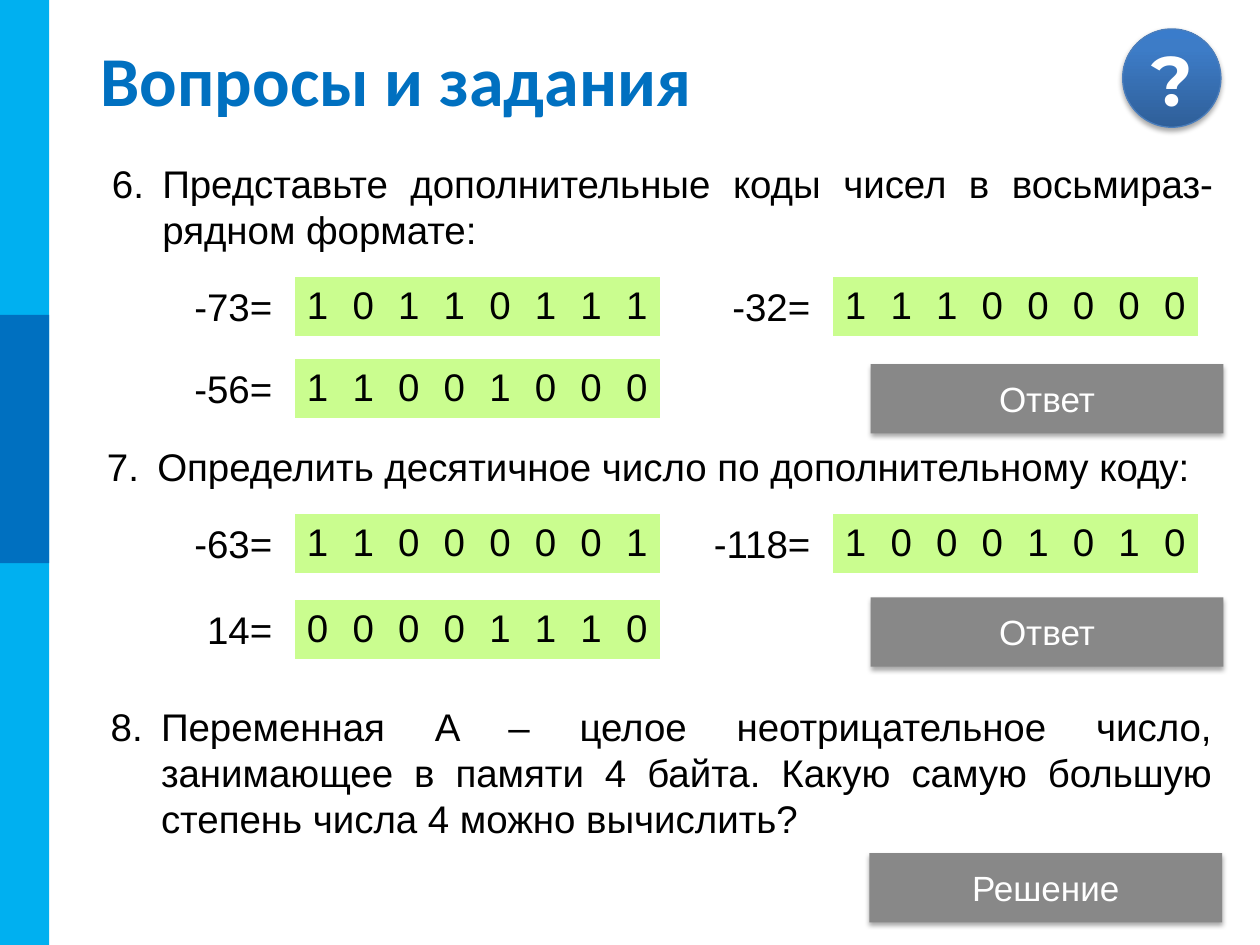
from copy import deepcopy
from dataclasses import dataclass

from pptx import Presentation
from pptx.dml.color import RGBColor
from pptx.enum.shapes import MSO_SHAPE as Preset
from pptx.enum.text import MSO_ANCHOR as Anchor, PP_ALIGN as Align
from pptx.oxml import parse_xml
from pptx.oxml.ns import nsdecls, qn
from pptx.util import Inches, Pt

WIDTH, HEIGHT = Inches(10), Inches(7.5)
COLUMNS, ROWS = 100, 75
BIT_COLUMNS, CODE_ROWS = 3.62, 4.6
NO_TABLE_STYLE = "{2D5ABB26-0587-4C30-8999-92F81FD0307C}"

TITLE_FONT = {"name": "Calibri", "size": Pt(40), "bold": True}
MARK_FONT = {"name": "Montserrat", "size": Pt(40), "bold": True}
BODY_FONT = {"name": "Arial", "size": Pt(22)}
BUTTON_FONT = {"name": "Arial", "size": Pt(20)}
NO_MARGINS = {"margin_left": 0, "margin_right": 0}
PLAIN_TABLE = {"first_row": False, "horz_banding": False}


@dataclass(frozen=True)
class Area:
    """A rectangle counted in grid columns and rows."""

    column: float
    row: float
    columns: float
    rows: float

    def box(self) -> tuple[int, int, int, int]:
        """Return left, top, width and height as slide lengths."""
        return (
            int(WIDTH * self.column / COLUMNS),
            int(HEIGHT * self.row / ROWS),
            int(WIDTH * self.columns / COLUMNS),
            int(HEIGHT * self.rows / ROWS),
        )


@dataclass(frozen=True)
class Question:
    """A numbered task."""

    number: int
    wording: str
    area: Area
    align: Align


@dataclass(frozen=True)
class Code:
    """A decimal number beside its eight-bit code."""

    decimal: str
    bits: str
    column: float
    row: float


@dataclass(frozen=True)
class Button:
    """A grey button that stands for a hidden answer."""

    caption: str
    column: float
    row: float


BANDS = [
    (Area(0, 0, 3.9, 75), "00B0F0"),
    (Area(0, 25, 3.9, 19.7), "0070C0"),
]
QUESTIONS = [
    Question(6, "Представьте дополнительные коды чисел в восьмираз-рядном формате:",
             Area(7.9, 12.2, 89.4, 8.4), Align.JUSTIFY),
    Question(7, "Определить десятичное число по дополнительному коду:",
             Area(7.5, 34.7, 92.5, 4.7), Align.LEFT),
    Question(8, "Переменная A – целое неотрицательное число, занимающее в памяти "
                "4 байта. Какую самую большую степень числа 4 можно вычислить?",
             Area(7.8, 55.3, 89.4, 12.1), Align.JUSTIFY),
]
LEFT_CODES, RIGHT_CODES = 23.4, 66.1
CODES = [
    Code("-73=", "10110111", LEFT_CODES, 22),
    Code("-32=", "11100000", RIGHT_CODES, 22),
    Code("-56=", "11001000", LEFT_CODES, 28.5),
    Code("-63=", "11000001", LEFT_CODES, 40.8),
    Code("-118=", "10001010", RIGHT_CODES, 40.8),
    Code("14=", "00001110", LEFT_CODES, 47.6),
]
BUTTONS = [
    Button("Ответ", 69.1, 28.9),
    Button("Ответ", 69.1, 47.4),
    Button("Решение", 69, 67.7),
]


def colour(code: str) -> RGBColor:
    """Turn a hex string into a colour."""
    return RGBColor.from_string(code)


def apply(target, values: dict) -> None:
    """Set every attribute named in the format values."""
    for name, value in values.items():
        setattr(target, name, value)


def write(frame, wording: str, font: dict, ink: str, align: Align):
    """Fill a text frame with one formatted paragraph."""
    paragraph = frame.paragraphs[0]
    paragraph.alignment = align
    run = paragraph.add_run()
    run.text = wording
    apply(run.font, font)
    run.font.color.rgb = colour(ink)
    return paragraph


def add_block(slide, preset: Preset, area: Area, fill: str):
    """Draw a flat shape without outline or shadow."""
    block = slide.shapes.add_shape(preset, *area.box())
    block.shadow.inherit = False
    block.fill.solid()
    block.fill.fore_color.rgb = colour(fill)
    block.line.fill.background()
    return block


def cast_shadow(block) -> None:
    """Give a shape a soft shadow below it."""
    effects = block.element.spPr.find(qn("a:effectLst"))
    effects.append(parse_xml(
        f'<a:outerShdw {nsdecls("a")} blurRad="{Pt(3.1)}" dist="{Pt(1.8)}" '
        'dir="5400000" rotWithShape="0"><a:srgbClr val="000000">'
        '<a:alpha val="35000"/></a:srgbClr></a:outerShdw>'))


def add_question_mark(slide) -> None:
    """Draw the round question badge."""
    badge = add_block(slide, Preset.OVAL, Area(89.1, 2.3, 7.8, 7.8), "3A7CCB")
    badge.fill.gradient()
    badge.fill.gradient_angle = 90
    gradient = badge.element.spPr.find(qn("a:gradFill")).find(qn("a:gsLst"))
    gradient.insert(1, deepcopy(gradient[0]))
    shades = [(0, "2F5F99"), (0.8, "3D7CC7"), (1, "3A7CCB")]
    for stop, (position, shade) in zip(badge.fill.gradient_stops, shades):
        stop.position = position
        stop.color.rgb = colour(shade)
    badge.line.color.rgb = colour("4B7EBC")
    badge.line.width = Pt(0.75)
    cast_shadow(badge)
    apply(badge.text_frame, {**NO_MARGINS, "vertical_anchor": Anchor.MIDDLE})
    write(badge.text_frame, "?", MARK_FONT, "FFFFFF", Align.CENTER)


def add_text(slide, wording: str, area: Area, align: Align):
    """Add body text and return its paragraph."""
    frame = slide.shapes.add_textbox(*area.box()).text_frame
    frame.word_wrap = True
    return write(frame, wording, BODY_FONT, "000000", align)


def add_question(slide, question: Question) -> None:
    """Add a task with its automatic number on a hanging indent."""
    paragraph = add_text(slide, question.wording, question.area, question.align)
    properties = paragraph._p.get_or_add_pPr()
    properties.set("marL", str(Inches(0.4)))
    properties.set("indent", str(-Inches(0.4)))
    properties.append(parse_xml(
        f'<a:buFont {nsdecls("a")} typeface="+mj-lt"/>'))
    properties.append(parse_xml(
        f'<a:buAutoNum {nsdecls("a")} type="arabicPeriod" startAt="{question.number}"/>'))


def add_code(slide, code: Code) -> None:
    """Add a number and the table of its bits."""
    add_text(slide, code.decimal, Area(code.column - 11.8, code.row, 11, 4.7), Align.RIGHT)
    area = Area(code.column, code.row, BIT_COLUMNS * len(code.bits), CODE_ROWS)
    holder = slide.shapes.add_table(1, len(code.bits), *area.box())
    apply(holder.table, PLAIN_TABLE)
    next(holder.element.iter(qn("a:tableStyleId"))).text = NO_TABLE_STYLE
    for cell, bit in zip(holder.table.iter_cells(), code.bits):
        apply(cell, {**NO_MARGINS, "vertical_anchor": Anchor.MIDDLE})
        cell.fill.solid()
        cell.fill.fore_color.rgb = colour("CAFD8F")
        write(cell.text_frame, bit, BODY_FONT, "000000", Align.CENTER)


def add_button(slide, button: Button) -> None:
    """Add a captioned grey button."""
    area = Area(button.column, button.row, 28, 5.5)
    block = add_block(slide, Preset.RECTANGLE, area, "888888")
    cast_shadow(block)
    block.text_frame.vertical_anchor = Anchor.MIDDLE
    write(block.text_frame, button.caption, BUTTON_FONT, "FFFFFF", Align.CENTER)


def main() -> None:
    """Build the slide of questions and save it."""
    deck = Presentation()
    apply(deck, {"slide_width": WIDTH, "slide_height": HEIGHT})
    slide = deck.slides.add_slide(deck.slide_layouts.get_by_name("Title Only"))
    for area, fill in BANDS:
        add_block(slide, Preset.RECTANGLE, area, fill)
    add_question_mark(slide)
    title = slide.shapes.title
    apply(title, dict(zip(("left", "top", "width", "height"), Area(7, 3, 90.2, 6.4).box())))
    title.text_frame.vertical_anchor = Anchor.MIDDLE
    write(title.text_frame, "Вопросы и задания", TITLE_FONT, "0070C0", Align.LEFT)
    for draw, parts in ((add_question, QUESTIONS), (add_code, CODES), (add_button, BUTTONS)):
        for part in parts:
            draw(slide, part)
    deck.save("out.pptx")


if __name__ == "__main__":
    main()
